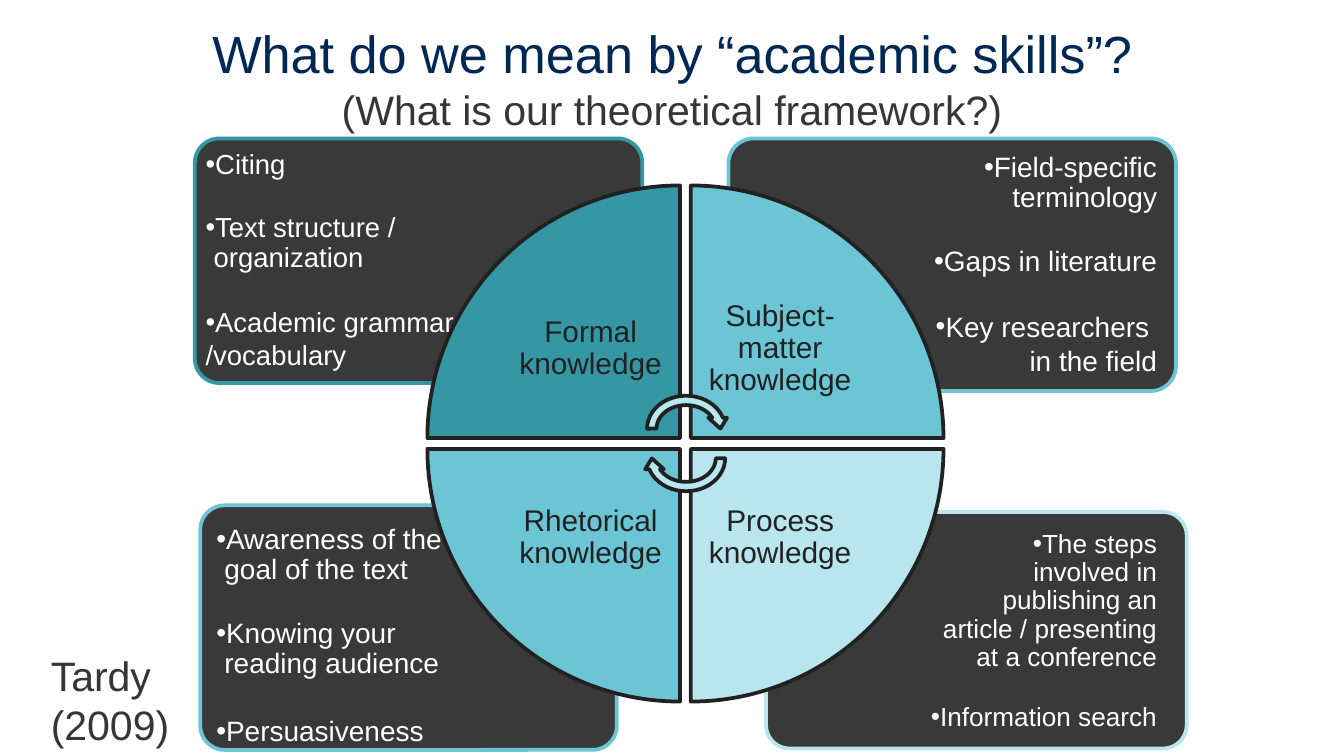
from lxml import etree
from pptx import Presentation
from pptx.dml.color import RGBColor
from pptx.enum.shapes import MSO_SHAPE as Preset
from pptx.enum.text import MSO_ANCHOR as Anchor, MSO_AUTO_SIZE as AutoSize, PP_ALIGN as Align
from pptx.oxml.ns import qn
from pptx.util import Emu, Pt

EMU_PER_PX = 9144
FONT = "Arial"
WHITE = RGBColor(0xFF, 0xFF, 0xFF)
INK = RGBColor(0x21, 0x21, 0x21)
GRAY = RGBColor(0x36, 0x36, 0x36)
NAVY = RGBColor(0x00, 0x28, 0x55)
TEAL = RGBColor(0x35, 0x97, 0xA4)
SKY = RGBColor(0x6B, 0xC5, 0xD5)
PALE = RGBColor(0xB9, 0xE5, 0xEE)
ARROW = RGBColor(0xB7, 0xE7, 0xEF)

WEDGE_SIZE = 188
LABEL_SIZE = 133
WEDGE_LEFTS = (318, 514)
WEDGE_TOPS = (138, 334)

QUADRANTS = [
    ("Formal knowledge", 0, 0, 0, TEAL),
    ("Subject-matter knowledge", 1, 0, 90, SKY),
    ("Process knowledge", 1, 1, 180, PALE),
    ("Rhetorical knowledge", 0, 1, 270, SKY),
]

PANELS = [
    ((570, 381, 313, 176), PALE),
    ((149, 376, 310, 182), SKY),
    ((542, 103, 333, 188), SKY),
    ((145, 103, 333, 182), TEAL),
]

LISTS = [
    ((686, 390, 180, 167), Align.RIGHT, 14, [
        ("The steps\vinvolved in publishing an article / presenting at a conference", True, 0),
        ("Information search", True, 17),
    ]),
    ((156, 386, 189, 165), Align.LEFT, 15, [
        ("Awareness of the goal of the text", True, 0),
        ("Knowing your reading audience", True, 18),
        ("Persuasiveness", True, 20),
    ]),
    ((658, 109, 208, 151), Align.RIGHT, 15, [
        ("Field-specific terminology", True, 0),
        ("Gaps in literature", True, 18),
        ("Key researchers ", True, 19),
        ("in the field", False, 2),
    ]),
    ((148, 107, 214, 173), Align.LEFT, 14.7, [
        ("Citing", True, 0),
        ("Text structure / organization", True, 18),
        ("Academic grammar", True, 19),
        ("/vocabulary", False, 2),
    ]),
]


def px(value):
    return Emu(value * EMU_PER_PX)


def box(*lengths):
    return [px(length) for length in lengths]


def style_font(font, size, color):
    font.name = FONT
    font.size = Pt(size)
    font.color.rgb = color


def set_frame(text_frame, horizontal, vertical, anchor=Anchor.TOP):
    text_frame.word_wrap = True
    text_frame.auto_size = AutoSize.NONE
    text_frame.vertical_anchor = anchor
    text_frame.margin_left = text_frame.margin_right = px(horizontal)
    text_frame.margin_top = text_frame.margin_bottom = px(vertical)


def add_bullet(paragraph):
    properties = paragraph._p.get_or_add_pPr()
    properties.set("marL", str(px(6)))
    properties.set("indent", str(-px(6)))
    bullet_color = etree.SubElement(properties, qn("a:buClr"))
    etree.SubElement(bullet_color, qn("a:srgbClr"), val=str(WHITE))
    etree.SubElement(properties, qn("a:buFont"), typeface=FONT)
    etree.SubElement(properties, qn("a:buChar"), char="•")


def add_shape(slide, preset, place, fill, line, rotation=0):
    shape = slide.shapes.add_shape(preset, *box(*place))
    shape.shadow.inherit = False
    shape.rotation = rotation
    shape.fill.solid()
    shape.fill.fore_color.rgb = fill
    shape.line.color.rgb = line
    shape.line.width = Pt(2)
    return shape


def add_panel(slide, place, line):
    panel = add_shape(slide, Preset.ROUNDED_RECTANGLE, place, INK, line)
    panel.adjustments[0] = 0.1
    color = panel._element.spPr.find(qn("a:solidFill")).find(qn("a:srgbClr"))
    etree.SubElement(color, qn("a:alpha"), val="89000")


def add_label(slide, text, column, row):
    left = WEDGE_LEFTS[column] + (1 - column) * (WEDGE_SIZE - LABEL_SIZE)
    top = WEDGE_TOPS[row] + (1 - row) * (WEDGE_SIZE - LABEL_SIZE)
    label = slide.shapes.add_textbox(*box(left, top, LABEL_SIZE, LABEL_SIZE))
    set_frame(label.text_frame, 12, 12, Anchor.MIDDLE)
    label.text_frame.text = text
    paragraph = label.text_frame.paragraphs[0]
    paragraph.alignment = Align.CENTER
    paragraph.line_spacing = 0.9
    style_font(paragraph.runs[0].font, 16, INK)


def add_list(slide, place, alignment, size, items):
    text_frame = slide.shapes.add_textbox(*box(*place)).text_frame
    set_frame(text_frame, 5, 5)
    text_frame.text = "\n".join(text for text, _, _ in items)
    for paragraph, (_, bulleted, space) in zip(text_frame.paragraphs, items):
        paragraph.alignment = alignment
        paragraph.line_spacing = 0.9
        paragraph.space_before = Pt(space)
        if bulleted:
            add_bullet(paragraph)
        for run in paragraph.runs:
            style_font(run.font, size, WHITE)


def add_title(slide):
    title = slide.shapes.title
    title.left, title.top, title.width, title.height = box(34, 6, 932, 63)
    set_frame(title.text_frame, 10, 10)
    title.text_frame.text = "What do we mean by “academic skills”?\v(What is our theoretical framework?)"
    paragraph = title.text_frame.paragraphs[0]
    paragraph.alignment = Align.CENTER
    for run, size, color in zip(paragraph.runs, (28, 22), (NAVY, GRAY)):
        style_font(run.font, size, color)


def add_citation(slide):
    text_frame = slide.shapes.add_textbox(*box(28, 479, 130, 84)).text_frame
    set_frame(text_frame, 10, 5)
    text_frame.text = "Tardy (2009)"
    style_font(text_frame.paragraphs[0].runs[0].font, 22, GRAY)


def main():
    presentation = Presentation()
    presentation.slide_width = px(1000)
    presentation.slide_height = px(1000) * 9 // 16
    slide = presentation.slides.add_slide(presentation.slide_layouts[5])
    slide.background.fill.solid()
    slide.background.fill.fore_color.rgb = WHITE
    add_title(slide)
    for place, line in PANELS:
        add_panel(slide, place, line)
    for text, column, row, rotation, fill in QUADRANTS:
        place = (WEDGE_LEFTS[column], WEDGE_TOPS[row], WEDGE_SIZE, WEDGE_SIZE)
        add_shape(slide, Preset.PIE_WEDGE, place, fill, INK, rotation)
        add_label(slide, text, column, row)
    for top, rotation in ((291, 0), (313, 180)):
        add_shape(slide, Preset.CIRCULAR_ARROW, (478, top, 65, 56), ARROW, INK, rotation)
    for place, alignment, size, items in LISTS:
        add_list(slide, place, alignment, size, items)
    add_citation(slide)
    presentation.save("out.pptx")


if __name__ == "__main__":
    main()
